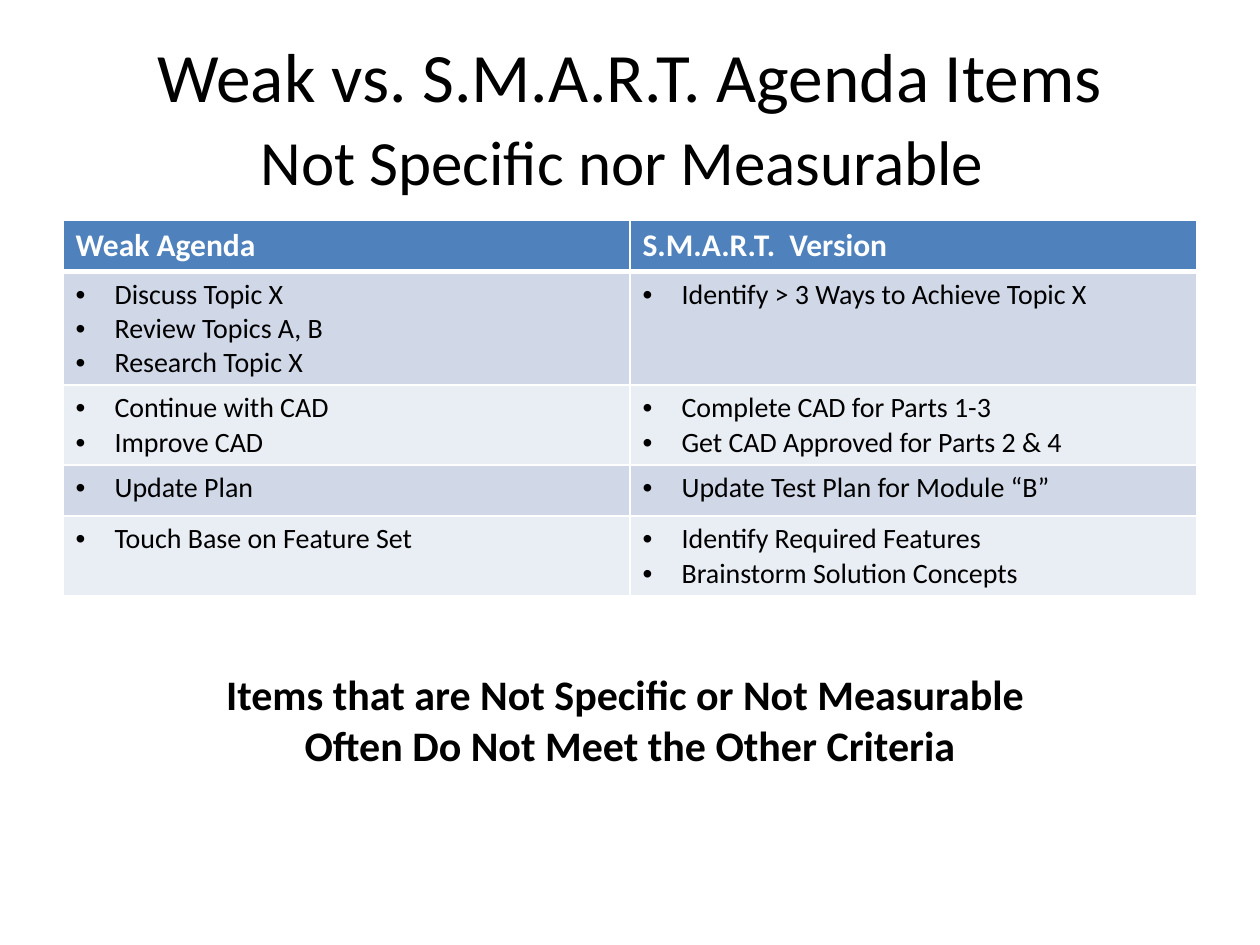
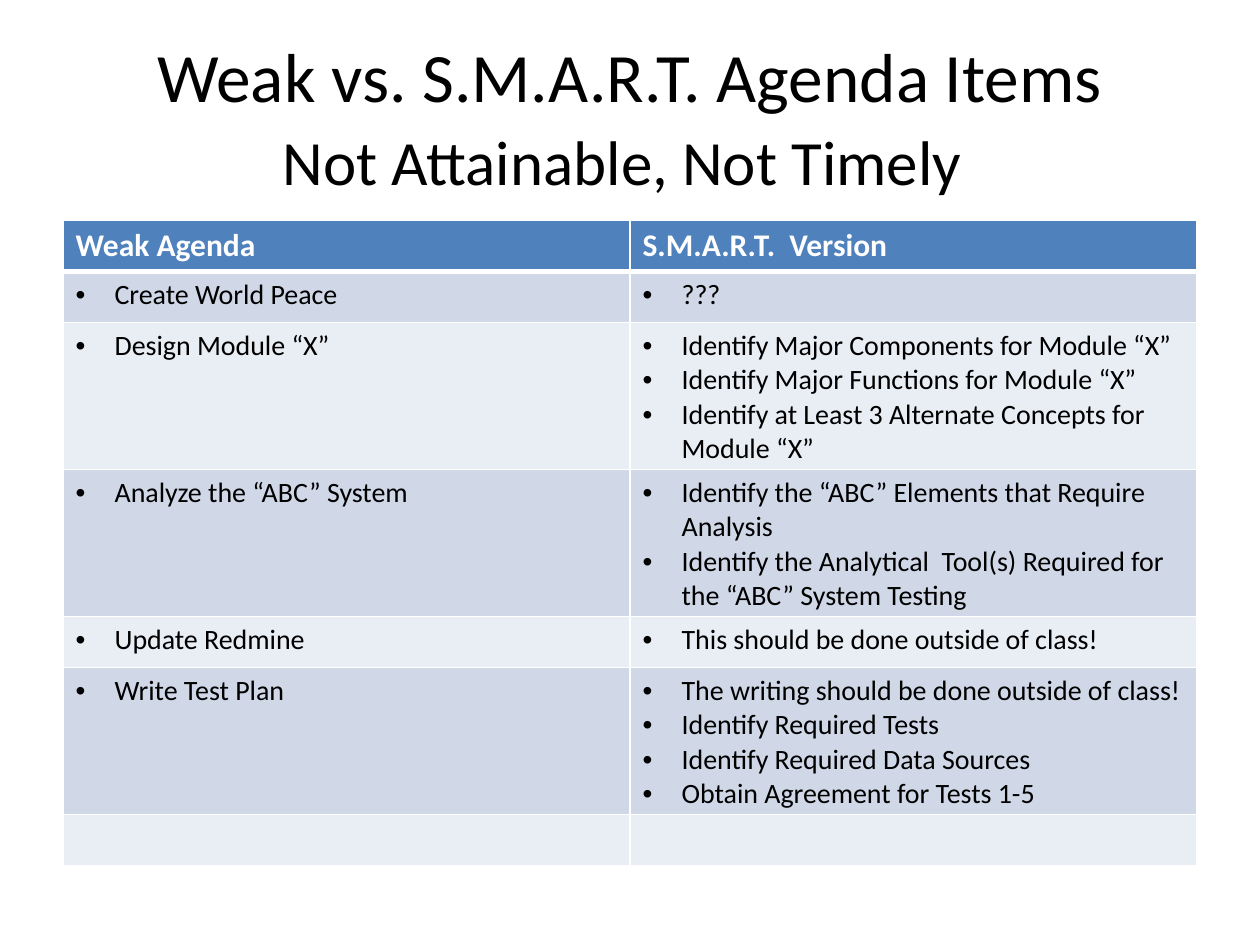
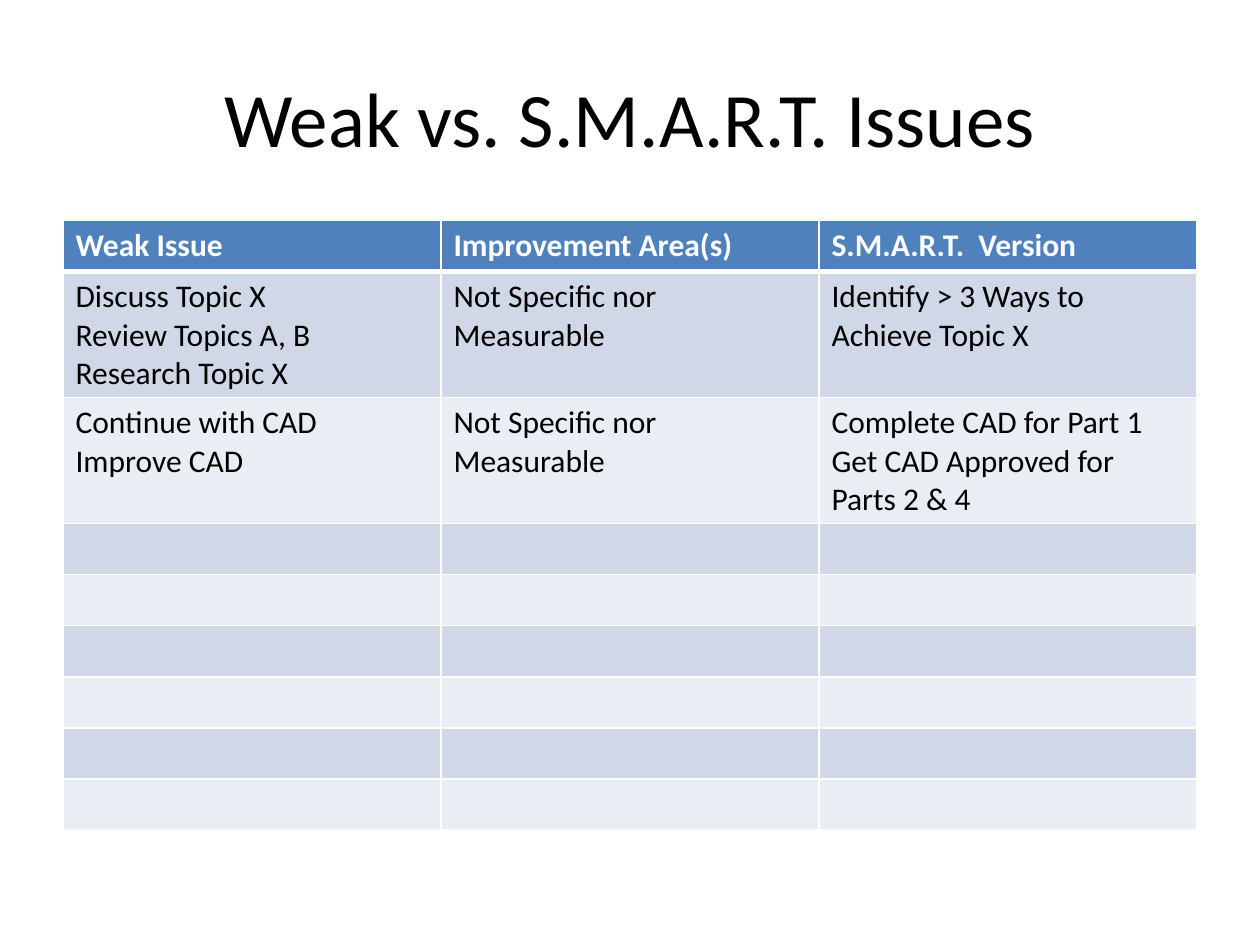
from dataclasses import dataclass

from lxml import etree
from pptx import Presentation
from pptx.dml.color import RGBColor
from pptx.enum.text import MSO_ANCHOR, PP_ALIGN
from pptx.oxml.ns import qn
from pptx.util import Inches, Pt

LEFT, CENTER = PP_ALIGN.LEFT, PP_ALIGN.CENTER
TOP, MIDDLE = MSO_ANCHOR.TOP, MSO_ANCHOR.MIDDLE
WIDTH, HEIGHT = Inches(10), Inches(7.5)
COLS, ROWS = 200, 150
SIDE, SPAN = 10, 180


@dataclass(frozen=True)
class Theme:
    font: str = "Calibri"
    ink: str = "000000"
    paper: str = "FFFFFF"
    head: str = "4F81BD"
    bands: tuple = ("D0D8E8", "E9EDF4")
    title: float = 44
    first: float = 39.6
    second: float = 36
    note: float = 24
    body: float = 18
    small: float = 16
    thin: float = 1
    thick: float = 3


def indent(para):
    props = para._p.get_or_add_pPr()
    props.set("marL", str(Inches(0.31)))
    props.set("indent", str(-Inches(0.31)))
    etree.SubElement(props, qn("a:buFont"), typeface="Arial")
    etree.SubElement(props, qn("a:buChar"), char="•")


def write(frame, paras, *, font, size, color, bold=False, align=LEFT, bullet=False):
    for index, runs in enumerate(paras):
        para = frame.paragraphs[0] if index == 0 else frame.add_paragraph()
        para.alignment = align
        if bullet:
            indent(para)
        for part in [(runs, size)] if isinstance(runs, str) else runs:
            text, points = part
            for place, line in enumerate(text.split("\n")):
                if place:
                    para.add_line_break()
                if line:
                    run = para.add_run()
                    run.text = line
                    run.font.name, run.font.size, run.font.bold = font, Pt(points), bold
                    run.font.color.rgb = RGBColor.from_string(color)


def edge(cell, side, color, points):
    line = etree.SubElement(cell._tc.get_or_add_tcPr(), qn(f"a:ln{side}"), w=str(Pt(points)))
    fill = etree.SubElement(line, qn("a:solidFill"))
    etree.SubElement(fill, qn("a:srgbClr"), val=color)


class Deck:
    def __init__(self, theme):
        self.theme = theme
        self.show = Presentation()
        self.show.slide_width, self.show.slide_height = WIDTH, HEIGHT
        self.slide = None

    def page(self):
        self.slide = self.show.slides.add_slide(self.show.slide_layouts[6])

    def area(self, col, row, wide, high):
        return (round(WIDTH * col / COLS), round(HEIGHT * row / ROWS),
                round(WIDTH * wide / COLS), round(HEIGHT * high / ROWS))

    def text(self, area, paras, size, anchor=TOP, bold=False):
        frame = self.slide.shapes.add_textbox(*self.area(*area)).text_frame
        frame.word_wrap = True
        frame.vertical_anchor = anchor
        write(frame, paras, font=self.theme.font, size=size,
              color=self.theme.ink, bold=bold, align=CENTER)

    def title(self, main, sub=None):
        look = self.theme
        runs = main
        if sub:
            runs = [(main + "\n", look.first), (sub, look.second), (" ", look.first)]
        self.text((SIDE, 6, SPAN, 25), [runs], look.title, MIDDLE)

    def note(self, text):
        self.text((0, 105.2, COLS, 18.2), [text], self.theme.note, bold=True)

    def table(self, heads, rows, size, bullet=False, spare=0):
        look = self.theme
        rows = rows + [[[] for _ in heads]] * spare
        grid = [[[head] for head in heads]] + rows
        area = self.area(SIDE, 35, SPAN, 8.11 * len(grid))
        table = self.slide.shapes.add_table(len(grid), len(heads), *area).table
        for row, items in enumerate(grid):
            top = row == 0
            for col, paras in enumerate(items):
                cell = table.cell(row, col)
                for side in "LRTB":
                    heavy = (row, side) in ((0, "B"), (1, "T"))
                    edge(cell, side, look.paper, look.thick if heavy else look.thin)
                cell.fill.solid()
                tint = look.head if top else look.bands[(row - 1) % 2]
                cell.fill.fore_color.rgb = RGBColor.from_string(tint)
                write(cell.text_frame, paras, font=look.font,
                      size=look.body if top else size,
                      color=look.paper if top else look.ink,
                      bold=top, bullet=bullet and not top)


def main():
    theme = Theme()
    deck = Deck(theme)
    agenda = "Weak vs. S.M.A.R.T. Agenda Items"
    smart = "S.M.A.R.T.  Version"
    heads = ["Weak Agenda", smart]
    topics = ["Discuss Topic X", "Review Topics A, B", "Research Topic X"]
    models = ["Continue with CAD", "Improve CAD"]
    vague = "Not Specific nor Measurable"
    ways = "Identify > 3 Ways to Achieve Topic X"
    passed = "Get CAD Approved for Parts 2 & 4"

    deck.page()
    deck.title(agenda, vague)
    deck.table(heads, [
        [topics, [ways]],
        [models, ["Complete CAD for Parts 1-3", passed]],
        [["Update Plan"], ["Update Test Plan for Module “B”"]],
        [["Touch Base on Feature Set"],
         ["Identify Required Features", "Brainstorm Solution Concepts"]],
    ], theme.small, bullet=True)
    deck.note("Items that are Not Specific or Not Measurable \n"
              "Often Do Not Meet the Other Criteria")

    deck.page()
    deck.title(agenda, "Not Attainable, Not Timely")
    deck.table(heads, [
        [["Create World Peace"], ["???"]],
        [["Design Module “X”"],
         ["Identify Major Components for Module “X”",
          "Identify Major Functions for Module “X”",
          "Identify at Least 3 Alternate Concepts for Module “X”"]],
        [["Analyze the “ABC” System"],
         ["Identify the “ABC” Elements that Require Analysis",
          "Identify the Analytical  Tool(s) Required for the “ABC” System Testing"]],
        [["Update Redmine"], ["This should be done outside of class!"]],
        [["Write Test Plan"],
         ["The writing should be done outside of class!",
          "Identify Required Tests",
          "Identify Required Data Sources",
          "Obtain Agreement for Tests 1-5"]],
    ], theme.small, bullet=True, spare=1)

    deck.page()
    deck.title("Weak vs. S.M.A.R.T. Issues")
    deck.table(["Weak Issue", "Improvement Area(s)", smart], [
        [topics, [vague], [ways]],
        [models, [vague], ["Complete CAD for Part 1", passed]],
    ], theme.body, spare=6)

    deck.show.save("out.pptx")


if __name__ == "__main__":
    main()
